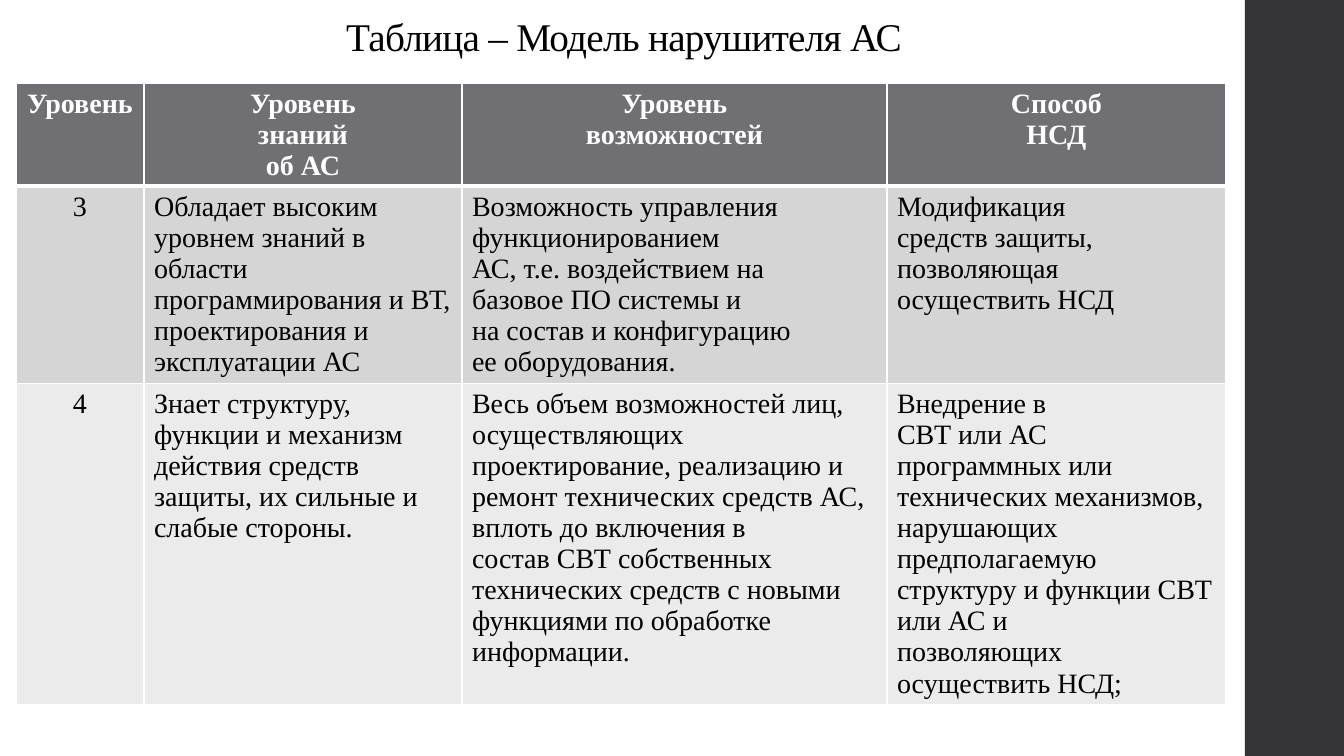
from dataclasses import dataclass

from lxml import etree
from pptx import Presentation
from pptx import util as u
from pptx.dml.color import RGBColor
from pptx.enum import shapes, text
from pptx.oxml import ns

PX = 12192000 // 1344 + 1 / 2  # EMU in one px


@dataclass(frozen=True)
class Theme:
    font: str = "Times New Roman"
    title_size: int = 28
    cell_size: int = 20
    title_spacing: int = -50  # hundredths of a point
    ink: str = "000000"
    paper: str = "FFFFFF"
    side_bar: str = "353537"
    header: str = "6F6F74"
    bands: tuple = ("D5D5D6", "EBEBEB")


THEME = Theme()
COLUMN_WIDTHS = (128, 318, 425, 339)
ROW_HEIGHTS = (103, 197, 320)

# One string per cell; each line is a paragraph
ROWS = (
    ("Уровень", "Уровень\nзнаний\nоб АС", "Уровень\nвозможностей", "Способ\nНСД"),
    (
        "3",
        "Обладает высоким\n"
        "уровнем знаний в области программирования и ВТ, проектирования и эксплуатации АС",
        "Возможность управления функционированием\nАС, т.е. воздействием на\n"
        "базовое ПО системы и\nна состав и конфигурацию\nее оборудования.",
        "Модификация\nсредств защиты,\nпозволяющая осуществить НСД",
    ),
    (
        "4",
        "Знает структуру,\nфункции и механизм\n"
        "действия средств защиты, их сильные и слабые стороны.",
        "Весь объем возможностей лиц, осуществляющих проектирование, "
        "реализацию и ремонт технических средств АС,\nвплоть до включения в\n"
        "состав СВТ собственных\n"
        "технических средств с новыми функциями по обработке информации.",
        "Внедрение в\nСВТ или АС программных или технических механизмов, нарушающих\n"
        "предполагаемую\nструктуру и функции СВТ или АС и\nпозволяющих осуществить НСД;",
    ),
)


def px(length):
    return u.Emu(round(length * PX))


def color(value):
    return RGBColor.from_string(value)


def format_paragraph(paragraph, size, ink, alignment, bold=False):
    paragraph.alignment = alignment
    font = paragraph.font
    font.name, font.size, font.bold = THEME.font, u.Pt(size), bold
    font.color.rgb = color(ink)


def add_side_bar(slide, box):
    bar = slide.shapes.add_shape(shapes.MSO_SHAPE.RECTANGLE, *map(px, box))
    bar.shadow.inherit = False
    bar.fill.solid()
    bar.fill.fore_color.rgb = color(THEME.side_bar)
    bar.line.fill.background()


def fill_title(slide, box, wording):
    title = slide.shapes.title
    title.left, title.top, title.width, title.height = map(px, box)
    frame = title.text_frame
    frame.text = wording
    frame.word_wrap = True
    frame.auto_size = text.MSO_AUTO_SIZE.NONE
    frame.vertical_anchor = text.MSO_ANCHOR.BOTTOM
    paragraph = frame.paragraphs[0]
    format_paragraph(paragraph, THEME.title_size, THEME.ink, text.PP_ALIGN.CENTER)
    paragraph.line_spacing = 0.9
    paragraph.runs[0].font._element.set("spc", str(THEME.title_spacing))


def set_borders(cell, widths):
    """Draw the cell's sides; widths are in points, keyed L, R, T, B."""
    properties = cell._tc.get_or_add_tcPr()
    for position, (side, width) in enumerate(widths.items()):
        line = etree.Element(ns.qn(f"a:ln{side}"), w=str(u.Pt(width)))
        fill = etree.SubElement(line, ns.qn("a:solidFill"))
        etree.SubElement(fill, ns.qn("a:srgbClr"), val=THEME.paper)
        properties.insert(position, line)


def format_cell(cell, row, column):
    is_header = row == 0
    centred = is_header or column == 0
    cell.fill.solid()
    cell.fill.fore_color.rgb = color(THEME.header if is_header else THEME.bands[row - 1])
    for paragraph in cell.text_frame.paragraphs:
        format_paragraph(
            paragraph,
            THEME.cell_size,
            THEME.paper if is_header else THEME.ink,
            text.PP_ALIGN.CENTER if centred else text.PP_ALIGN.LEFT,
            bold=is_header,
        )
    # The rule under the header is thicker
    set_borders(cell, {"L": 1, "R": 1, "T": 3 if row == 1 else 1, "B": 3 if is_header else 1})


def add_intruder_table(slide, left, top):
    box = (left, top, sum(COLUMN_WIDTHS), sum(ROW_HEIGHTS))
    table = slide.shapes.add_table(len(ROWS), len(COLUMN_WIDTHS), *map(px, box)).table
    for column, width in zip(table.columns, COLUMN_WIDTHS):
        column.width = px(width)
    for row, height in zip(table.rows, ROW_HEIGHTS):
        row.height = px(height)
    for row, wordings in enumerate(ROWS):
        for column, wording in enumerate(wordings):
            cell = table.cell(row, column)
            cell.text = wording
            format_cell(cell, row, column)


def main():
    presentation = Presentation()
    presentation.slide_width, presentation.slide_height = px(1344), px(756)
    slide = presentation.slides.add_slide(presentation.slide_layouts[5])
    add_side_bar(slide, (1245, 0, 99, 756))
    fill_title(slide, (34, 0, 1180, 65), "Таблица – Модель нарушителя АС")
    add_intruder_table(slide, 16, 83)
    presentation.save("out.pptx")


if __name__ == "__main__":
    main()
